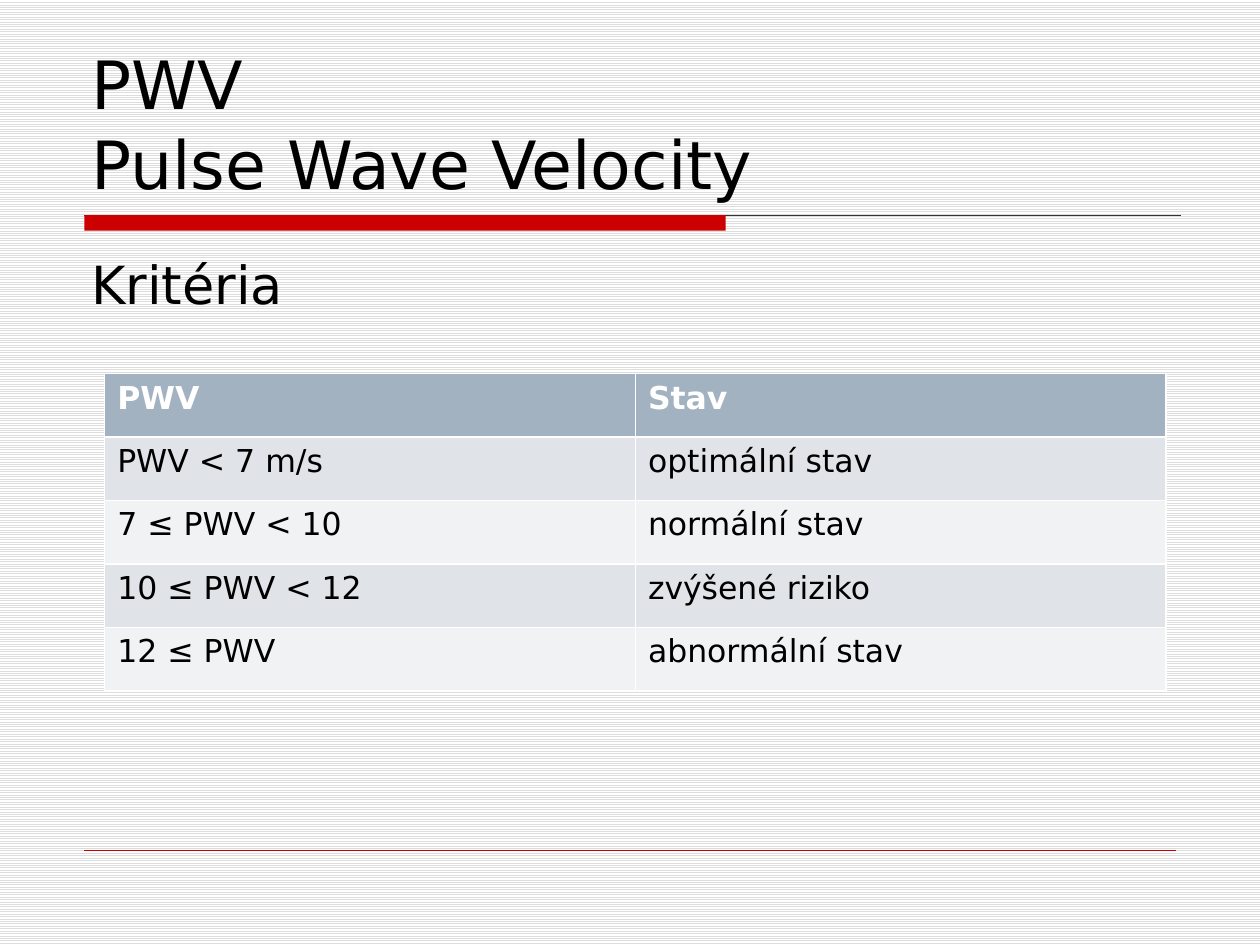
"""Build the slide with the pulse wave velocity criteria."""
from dataclasses import dataclass

from lxml import etree
from pptx import Presentation
from pptx.dml.color import RGBColor
from pptx.enum.dml import MSO_PATTERN
from pptx.enum.shapes import MSO_CONNECTOR, MSO_SHAPE
from pptx.enum.text import MSO_ANCHOR
from pptx.oxml.ns import qn
from pptx.util import Cm, Pt

LINES = MSO_PATTERN.LIGHT_HORIZONTAL
STRAIGHT = MSO_CONNECTOR.STRAIGHT
BOX = MSO_SHAPE.RECTANGLE
TOP, BOTTOM = MSO_ANCHOR.TOP, MSO_ANCHOR.BOTTOM

FONT = "DejaVu Sans"
BLACK, WHITE, RED = "000000", "FFFFFF", "CC0000"
HEAD, BANDS = "A3B2C1", ("F0F2F4", "E0E4E9")
ROWS = (
    ("PWV", "Stav"),
    ("PWV < 7 m/s", "optimální stav"),
    ("7 ≤ PWV < 10", "normální stav"),
    ("10 ≤ PWV < 12", "zvýšené riziko"),
    ("12 ≤ PWV", "abnormální stav"),
)


@dataclass(frozen=True)
class Label:
    text: str
    top: float
    height: float
    size: int
    anchor: MSO_ANCHOR


@dataclass(frozen=True)
class Rule:
    left: float
    right: float
    top: float
    color: str
    width: float


LABELS = (
    Label("PWV\vPulse Wave Velocity", 0.84, 3.38, 38, BOTTOM),
    Label("Kritéria", 4.95, 11.86, 30, TOP),
)
RULES = (
    Rule(1.7, 23.8, 4.34, "333333", 0.75),
    Rule(1.7, 23.7, 17.15, RED, 0.25),
)


def paint(color: str) -> RGBColor:
    return RGBColor.from_string(color)


def style(par, size: int, color: str, bold: bool = False) -> None:
    font = par.font
    font.name, font.size, font.bold = FONT, Pt(size), bold
    font.color.rgb = paint(color)


def add_label(slide, label: Label) -> None:
    box = slide.shapes.add_textbox(Cm(1.59), Cm(label.top), Cm(22.23), Cm(label.height))
    frame = box.text_frame
    frame.word_wrap = True
    frame.vertical_anchor = label.anchor
    frame.text = label.text
    style(frame.paragraphs[0], label.size, BLACK)


def add_rule(slide, rule: Rule) -> None:
    line = slide.shapes.add_connector(
        STRAIGHT, Cm(rule.left), Cm(rule.top), Cm(rule.right), Cm(rule.top))
    line.line.color.rgb = paint(rule.color)
    line.line.width = Pt(rule.width)
    etree.SubElement(line._element.spPr, qn("a:effectLst"))


def add_bar(slide) -> None:
    bar = slide.shapes.add_shape(BOX, Cm(1.7), Cm(4.34), Cm(12.93), Cm(0.31))
    bar.shadow.inherit = False
    bar.fill.solid()
    bar.fill.fore_color.rgb = paint(RED)
    bar.line.fill.background()


def add_grid(slide) -> None:
    grid = slide.shapes.add_table(
        len(ROWS), len(ROWS[0]), Cm(2.11), Cm(7.53), Cm(21.4), Cm(6.4)).table
    for i, row in enumerate(ROWS):
        for j, text in enumerate(row):
            cell = grid.cell(i, j)
            cell.text = text
            cell.fill.solid()
            cell.fill.fore_color.rgb = paint(BANDS[i % 2] if i else HEAD)
            style(cell.text_frame.paragraphs[0], 18, BLACK if i else WHITE, not i)


def main() -> None:
    deck = Presentation()
    deck.slide_width, deck.slide_height = Cm(25.4), Cm(19.05)
    slide = deck.slides.add_slide(deck.slide_layouts[6])
    fill = slide.background.fill
    fill.patterned()
    fill.pattern = LINES
    fill.fore_color.rgb = paint("DDDDDD")
    fill.back_color.rgb = paint(WHITE)
    for rule in RULES:
        add_rule(slide, rule)
    add_bar(slide)
    for label in LABELS:
        add_label(slide, label)
    add_grid(slide)
    deck.save("out.pptx")


if __name__ == "__main__":
    main()
